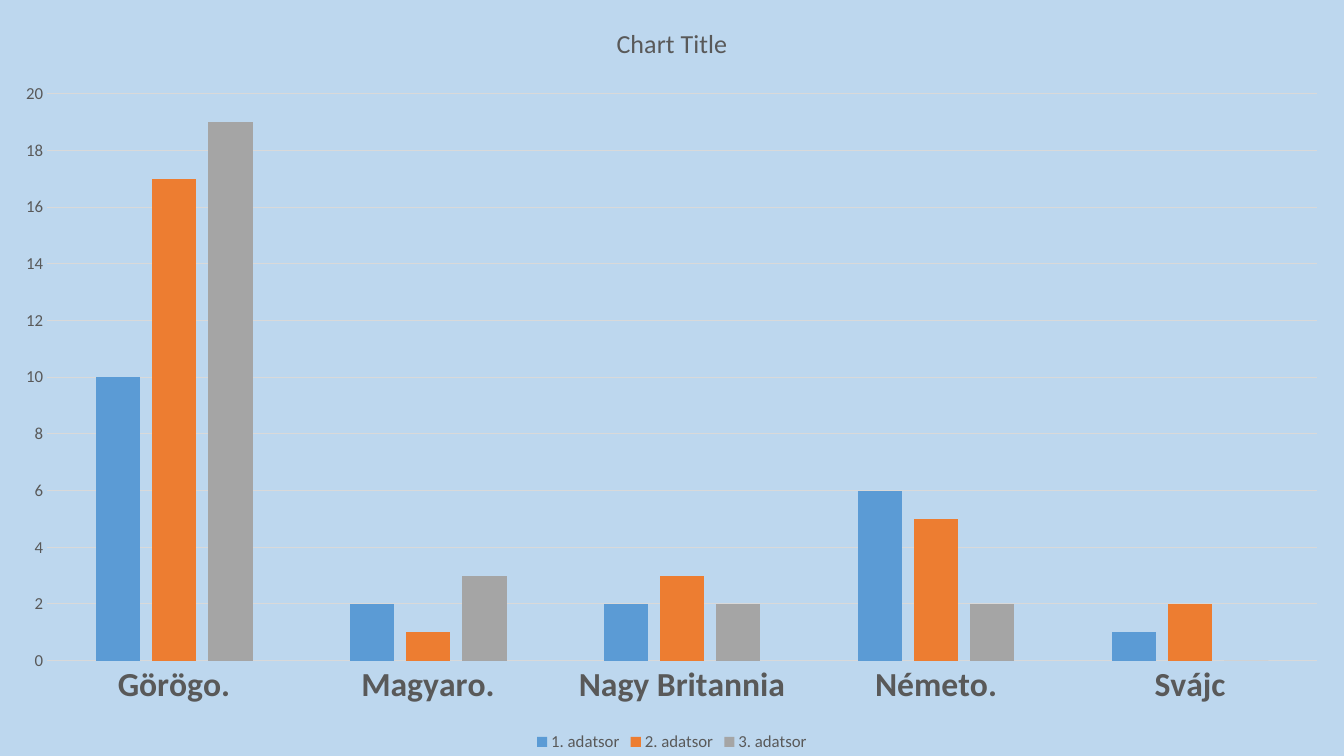
from dataclasses import dataclass

from lxml import etree
from pptx import Presentation
from pptx import util as u
from pptx.chart.data import CategoryChartData
from pptx.dml.color import RGBColor
from pptx.enum import chart as kinds
from pptx.oxml import parse_xml
from pptx.oxml.ns import nsdecls, qn


@dataclass(frozen=True)
class Theme:
    font: str = "Calibri"
    background: str = "BDD7EE"
    ink: str = "595959"
    rule: str = "D9D9D9"
    rule_width: float = 0.75
    title_size: float = 18.6
    category_size: float = 24
    label_size: float = 12


@dataclass(frozen=True)
class Series:
    name: str
    values: tuple[int, ...]
    color: str


THEME = Theme()
COUNTRIES = ("Görögo.", "Magyaro.", "Nagy Britannia", "Németo.", "Svájc")
SERIES = (
    Series("1. adatsor", (10, 2, 2, 6, 1), "5B9BD5"),
    Series("2. adatsor", (17, 1, 3, 5, 2), "ED7D31"),
    Series("3. adatsor", (19, 3, 2, 2, 0), "A5A5A5"),
)
# Plot area as shares of the slide
PLOT_SHARES = {"x": 0.035, "y": 0.124, "w": 0.945, "h": 0.75}


def apply(target, values: dict) -> None:
    for name, value in values.items():
        setattr(target, name, value)


def style_font(font, size: float, bold: bool = False) -> None:
    apply(font, {"name": THEME.font, "size": u.Pt(size), "bold": bold})
    font.color.rgb = RGBColor.from_string(THEME.ink)


def style_rule(line) -> None:
    line.color.rgb = RGBColor.from_string(THEME.rule)
    line.width = u.Pt(THEME.rule_width)


def fill_chart(chart, color: str) -> None:
    fill = parse_xml(
        f'<c:spPr {nsdecls("c", "a")}><a:solidFill><a:srgbClr val="{color}"/>'
        "</a:solidFill><a:ln><a:noFill/></a:ln></c:spPr>"
    )
    chart.element.find(qn("c:chart")).addnext(fill)


def place_plot(chart, shares: dict[str, float]) -> None:
    plot_area = chart.element.find(".//" + qn("c:plotArea"))
    for old in plot_area.findall(qn("c:layout")):
        plot_area.remove(old)
    layout = etree.Element(qn("c:layout"))
    manual = etree.SubElement(layout, qn("c:manualLayout"))
    settings = {"layoutTarget": "inner", "xMode": "edge", "yMode": "edge", **shares}
    for name, value in settings.items():
        etree.SubElement(manual, qn(f"c:{name}"), val=str(value))
    plot_area.insert(0, layout)


def style_axes(chart) -> None:
    countries, counts = chart.category_axis, chart.value_axis
    for axis, size, bold in (
        (countries, THEME.category_size, True),
        (counts, THEME.label_size, False),
    ):
        apply(axis, {"major_tick_mark": kinds.XL_TICK_MARK.NONE,
                     "minor_tick_mark": kinds.XL_TICK_MARK.NONE})
        style_font(axis.tick_labels.font, size, bold)
    style_rule(countries.format.line)
    apply(counts, {"minimum_scale": 0, "maximum_scale": 20, "major_unit": 2,
                   "has_major_gridlines": True})
    style_rule(counts.major_gridlines.format.line)
    counts.format.line.fill.background()


def add_column_chart(page, width: int, height: int) -> None:
    data = CategoryChartData()
    data.categories = COUNTRIES
    for series in SERIES:
        data.add_series(series.name, series.values)
    chart = page.shapes.add_chart(
        kinds.XL_CHART_TYPE.COLUMN_CLUSTERED, 0, 0, width, height, data
    ).chart
    style_font(chart.font, THEME.label_size)
    fill_chart(chart, THEME.background)

    # Title and legend
    chart.has_title = True
    para = chart.chart_title.text_frame.paragraphs[0]
    span = para.add_run()
    span.text = "Chart Title"
    style_font(span.font, THEME.title_size)
    chart.has_legend = True
    apply(chart.legend, {"position": kinds.XL_LEGEND_POSITION.BOTTOM,
                         "include_in_layout": False})
    style_font(chart.legend.font, THEME.label_size)

    # Columns
    plot = chart.plots[0]
    apply(plot, {"gap_width": 219, "overlap": -27, "vary_by_categories": False})
    for columns, series in zip(plot.series, SERIES):
        columns.format.fill.solid()
        columns.format.fill.fore_color.rgb = RGBColor.from_string(series.color)
    style_axes(chart)
    place_plot(chart, PLOT_SHARES)


def main() -> None:
    deck = Presentation()
    apply(deck, {"slide_width": u.Inches(13.33), "slide_height": u.Inches(7.5)})
    page = deck.slides.add_slide(deck.slide_layouts[6])
    add_column_chart(page, deck.slide_width, deck.slide_height)
    deck.save("out.pptx")


if __name__ == "__main__":
    main()
